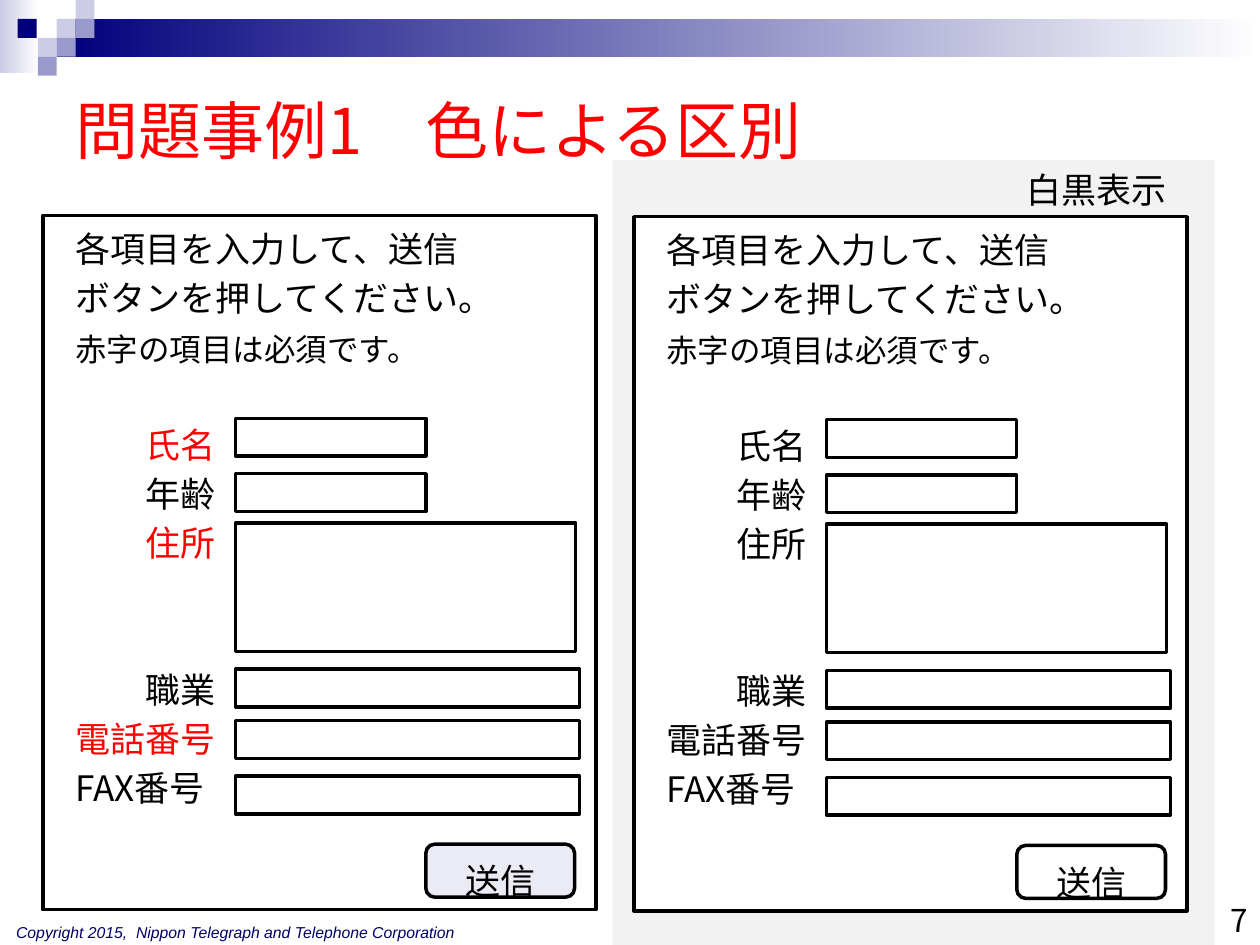
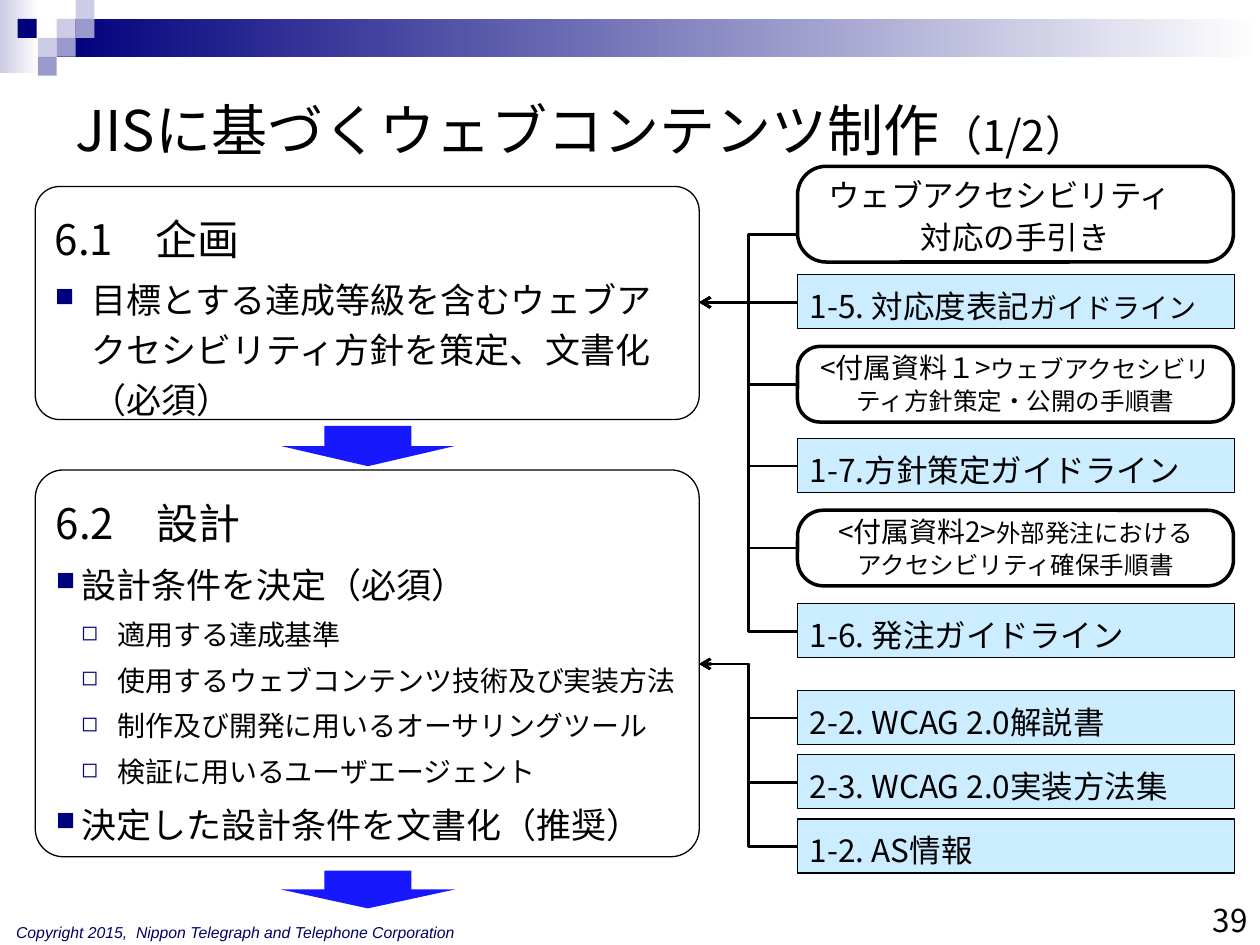
from lxml.etree import SubElement
from pptx import Presentation
from pptx.dml.color import RGBColor
from pptx.enum.shapes import MSO_CONNECTOR as LINK, MSO_SHAPE as SHAPE
from pptx.enum.text import MSO_ANCHOR as ANCHOR, PP_ALIGN as ALIGN
from pptx.oxml.ns import qn
from pptx.util import Inches, Pt

BLACK = RGBColor(0x00, 0x00, 0x00)
WHITE = RGBColor(0xFF, 0xFF, 0xFF)
RED = RGBColor(0xFF, 0x00, 0x00)
NAVY = RGBColor(0x00, 0x00, 0x7D)
FOOTER_NAVY = RGBColor(0x00, 0x00, 0x66)
PERIWINKLE = RGBColor(0x99, 0x99, 0xCC)
LAVENDER = RGBColor(0xCC, 0xCC, 0xE6)
BUTTON = RGBColor(0xEB, 0xEB, 0xF5)
GREY = RGBColor(0xF2, 0xF2, 0xF2)
SKY = RGBColor(0xCC, 0xEC, 0xFF)
BLUE = RGBColor(0x18, 0x18, 0xFF)

JAPANESE = "Noto Sans CJK JP"
COPYRIGHT = "Copyright 2015,  Nippon Telegraph and Telephone Corporation"
MOSAIC = [
    (0.45, 0.15, LAVENDER), (0.6, 0, LAVENDER), (0.6, 0.15, PERIWINKLE),
    (0.3, 0.3, LAVENDER), (0.14, 0.15, NAVY), (0.45, 0.3, PERIWINKLE),
    (0.3, 0.45, PERIWINKLE),
]

FORM_ROWS = [
    ("各項目を入力して、送信", {}),
    ("ボタンを押してください。", {}),
    ("赤字の項目は必須です。", {"size": 18}),
    ("氏名", {"color": RED, "left": 0.56, "before": 30}),
    ("年齢", {"left": 0.56}),
    ("住所", {"color": RED, "left": 0.56}),
    ("職業", {"left": 0.56, "before": 58}),
    ("電話番号", {"color": RED}),
    ("FAX番号", {}),
]
FORM_FIELDS = [
    (3.32, 1.51, 0.3), (3.76, 1.51, 0.3), (4.15, 2.7, 1.02),
    (5.31, 2.73, 0.3), (5.72, 2.73, 0.3), (6.16, 2.73, 0.3),
]

HEADING = {"size": 24, "line": 36.5}
POLICY = {"size": 20, "line": 28.6, "before": 4, "bullet": "■", "left": 0.29, "hang": 0.29}
DESIGN = {**POLICY, "left": 0.2, "hang": 0.2}
DETAIL = {"size": 16, "line": 22.9, "before": 3.2, "bullet": "◻", "left": 0.49, "hang": 0.29}
STAGES = [
    (1.48, 1.85, 0.105, [
        ("6.1　企画", HEADING),
        ("目標とする達成等級を含むウェブアクセシビリティ方針を策定、文書化（必須）", POLICY),
    ]),
    (3.73, 3.07, 0.073, [
        ("6.2　設計", HEADING),
        ("設計条件を決定（必須）", DESIGN),
        ("適用する達成基準", DETAIL),
        ("使用するウェブコンテンツ技術及び実装方法", DETAIL),
        ("制作及び開発に用いるオーサリングツール", DETAIL),
        ("検証に用いるユーザエージェント", DETAIL),
        ("決定した設計条件を文書化（推奨）", DESIGN),
    ]),
]
GUIDELINES = [
    (2.18, [("1-5. 対応度表記", 18), ("ガイドライン", 16)]),
    (3.48, "1-7.方針策定ガイドライン"),
    (4.79, "1-6. 発注ガイドライン"),
    (5.48, "2-2. WCAG 2.0解説書"),
    (5.99, "2-3. WCAG 2.0実装方法集"),
    (6.5, "1-2. AS情報"),
]
APPENDIX = {"size": 14, "line": 18, "align": ALIGN.CENTER}
MANUALS = [
    (1.32, 0.76, 0.299, [
        ("ウェブアクセシビリティ　対応の手引き", {"size": 18, "line": 24, "align": ALIGN.CENTER}),
    ]),
    (2.75, 0.6, 0.299, [
        ([("<付属資料１>", 16), ("ウェブアクセシビリティ方針策定・公開の手順書", 14)], APPENDIX),
    ]),
    (4.05, 0.6, 0.343, [
        ([("<付属資料2>", 16), ("外部発注における", 14)], APPENDIX),
        ("アクセシビリティ確保手順書", APPENDIX),
    ]),
]
REFERENCES = [
    (2.4, [1.86, 2.4, 3.05, 3.7, 4.35, 5.01]),
    (5.27, [5.7, 6.21, 6.72]),
]


class Deck:
    """Holds the shared style and the slide being built."""

    def __init__(self):
        self.prs = Presentation()
        self.prs.slide_width, self.prs.slide_height = Inches(10), Inches(7.5)
        self.slide = None

    def begin_slide(self, title, number):
        self.slide = self.prs.slides.add_slide(self.prs.slide_layouts[6])
        self.gradient((0, 0, 0.31, 0.58), LAVENDER)
        self.gradient((0.45, 0.15, 9.55, 0.3), NAVY)
        for left, top, color in MOSAIC:
            self.box((left, top, 0.15, 0.15), fill=color)
        self.label((0.03, 7.25, 4.04, 0.24), [
            (COPYRIGHT, {"size": 9, "font": "Arial", "color": FOOTER_NAVY, "italic": True})])
        self.label((0.5, 0.46, 8.93, 1.04), [title], anchor=ANCHOR.MIDDLE)
        self.label((7.67, 7, 2.33, 0.5), [(number, {"size": 18, "align": ALIGN.RIGHT})],
                   anchor=ANCHOR.BOTTOM)

    def gradient(self, at, color):
        band = self.box(at)
        band.fill.gradient()
        band.fill.gradient_angle = 0
        for stop, tone in zip(band.fill.gradient_stops, (color, WHITE)):
            stop.color.rgb = tone

    def box(self, at, kind=SHAPE.RECTANGLE, fill=None, line=None, corner=None):
        shape = self.slide.shapes.add_shape(kind, *map(Inches, at))
        shape.shadow.inherit = False
        if corner is not None:
            shape.adjustments[0] = corner
        if fill is None:
            shape.fill.background()
        else:
            shape.fill.solid()
            shape.fill.fore_color.rgb = fill
        if line is None:
            shape.line.fill.background()
        else:
            shape.line.color.rgb = BLACK
            shape.line.width = Pt(line)
        return shape

    def label(self, at, paragraphs, **frame):
        self.set_text(self.slide.shapes.add_textbox(*map(Inches, at)), paragraphs, **frame)

    def set_text(self, shape, paragraphs, anchor=ANCHOR.TOP, wrap=True, right=0.1):
        frame = shape.text_frame
        settings = {"word_wrap": wrap, "vertical_anchor": anchor, "margin_right": Inches(right)}
        for name, value in settings.items():
            setattr(frame, name, value)
        for index, (content, style) in enumerate(paragraphs):
            paragraph = frame.add_paragraph() if index else frame.paragraphs[0]
            self.set_paragraph(paragraph, style, first=index == 0)
            runs = [(content, style["size"])] if isinstance(content, str) else content
            for words, size in runs:
                self.set_run(paragraph.add_run(), words, size, style)

    def set_paragraph(self, paragraph, style, first):
        settings = {
            "alignment": style.get("align", ALIGN.LEFT),
            "line_spacing": Pt(style.get("line", style["size"] * 1.4)),
            "space_before": Pt(0 if first else style.get("before", 0)),
        }
        for name, value in settings.items():
            setattr(paragraph, name, value)
        props = paragraph._p.get_or_add_pPr()
        props.set("marL", str(Inches(style.get("left", 0))))
        props.set("indent", str(-Inches(style.get("hang", 0))))
        if "bullet" in style:
            tint = SubElement(props, qn("a:buClr"))
            SubElement(tint, qn("a:srgbClr"), val=str(NAVY))
            SubElement(props, qn("a:buSzPct"), val="75000")
            SubElement(props, qn("a:buChar"), char=style["bullet"])

    def set_run(self, run, words, size, style):
        run.text = words
        face = style.get("font", JAPANESE)
        settings = {"size": Pt(size), "name": face, "italic": style.get("italic", False)}
        for name, value in settings.items():
            setattr(run.font, name, value)
        run.font.color.rgb = style.get("color", BLACK)
        SubElement(run._r.get_or_add_rPr(), qn("a:ea"), typeface=face)

    def elbow(self, begin, end):
        link = self.slide.shapes.add_connector(LINK.ELBOW, *map(Inches, begin + end))
        link.line.color.rgb = BLACK
        link.line.width = Pt(1.5)
        SubElement(link._element.spPr.find(qn("a:ln")), qn("a:tailEnd"), type="arrow")
        SubElement(link._element.spPr, qn("a:effectLst"))


def entry_form(deck, dx, dy, panel, button, colored):
    deck.box((0.34 + dx, 1.71 + dy, 4.39, 5.51), fill=panel, line=2)
    rows = []
    for label, style in FORM_ROWS:
        row = {"size": 20, "line": 26, "before": 2, **style}
        if not colored:
            row["color"] = BLACK
        rows.append((label, row))
    deck.label((0.5 + dx, 1.73 + dy, 4.07, 4.6), rows)
    for top, width, height in FORM_FIELDS:
        deck.box((1.87 + dx, top + dy, width, height), line=2)
    send = deck.box((3.38 + dx, 6.7 + dy, 1.18, 0.42), SHAPE.ROUNDED_RECTANGLE, button, 2)
    deck.set_text(send, [("送信", {"size": 20, "line": 28, "align": ALIGN.CENTER})])


def color_slide(deck):
    deck.begin_slide(("問題事例1　色による区別", {"size": 36, "color": RED}), "7")
    deck.box((4.86, 1.27, 4.78, 6.23), fill=GREY)
    entry_form(deck, 0, 0, None, BUTTON, True)
    entry_form(deck, 4.69, 0.01, WHITE, None, False)
    deck.label((8.05, 1.33, 1.32, 0.37), [("白黒表示", {"size": 20, "line": 21})], wrap=False)


def production_slide(deck):
    title = [("JISに基づくウェブコンテンツ制作", 32), ("（1/2）", 24)]
    deck.begin_slide((title, {"size": 32}), "39")
    for top, height, corner, paragraphs in STAGES:
        stage = deck.box((0.28, top, 5.27, height), SHAPE.ROUNDED_RECTANGLE,
                         line=0.75, corner=corner)
        deck.set_text(stage, paragraphs, right=0.06)
    for top, height in ((3.38, 0.32), (6.91, 0.3)):
        deck.box((2.23, top, 1.38, height), SHAPE.DOWN_ARROW, BLUE)
    for target, sources in REFERENCES:
        for source in sources:
            deck.elbow((6.33, source), (5.55, target))
    for top, label in GUIDELINES:
        guideline = deck.box((6.33, top, 3.47, 0.43), fill=SKY, line=0.75)
        deck.set_text(guideline, [(label, {"size": 18})])
    for top, height, corner, paragraphs in MANUALS:
        manual = deck.box((6.33, top, 3.46, height), SHAPE.ROUNDED_RECTANGLE,
                          WHITE, 2, corner)
        deck.set_text(manual, paragraphs, anchor=ANCHOR.MIDDLE)


def main():
    deck = Deck()
    color_slide(deck)
    production_slide(deck)
    deck.prs.save("out.pptx")


if __name__ == "__main__":
    main()
